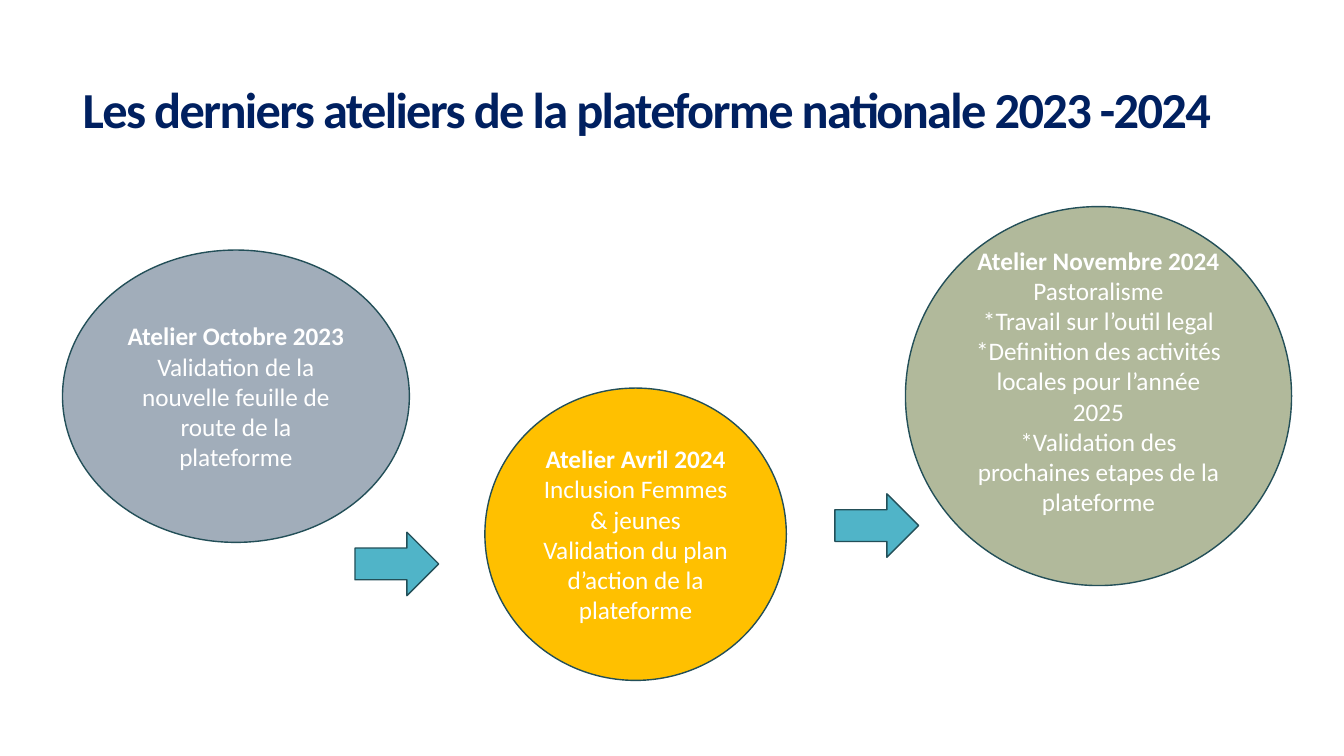
from dataclasses import dataclass

from pptx import Presentation
from pptx.dml.color import RGBColor as RGB
from pptx.enum.shapes import MSO_SHAPE as SHAPE
from pptx.enum.text import MSO_ANCHOR as ANCHOR, PP_ALIGN as ALIGN
from pptx.util import Inches, Pt

TITLE = "Les derniers ateliers de la plateforme nationale 2023 -2024"
TITLE_BOX = (5.4, 7.33, 88.37, 15.2)

WORKSHOPS = [
    {
        "name": "Atelier Octobre 2023",
        "topics": ["Validation de la nouvelle feuille de route de la plateforme"],
        "box": (4.65, 33.07, 25.81, 38.67),
        "fill": "A1ADBA",
        "bottom": 0.05,
    },
    {
        "name": "Atelier Avril 2024",
        "topics": [
            "Inclusion Femmes & jeunes",
            "Validation du plan d’action de la plateforme",
        ],
        "box": (36.08, 51.33, 22.43, 38.67),
        "fill": "FFC000",
        "bottom": 0.05,
    },
    {
        "name": "Atelier Novembre 2024",
        "topics": [
            "Pastoralisme",
            "*Travail sur l’outil legal",
            "*Definition des activités locales pour l’année 2025",
            "*Validation des prochaines etapes de la plateforme",
        ],
        "box": (67.37, 27.33, 28.73, 50.13),
        "fill": "B1B99B",
        "bottom": 0.35,
    },
]

ARROWS = [(26.41, 70.4), (62.12, 65.33)]
ARROW_SIZE = (6.23, 8.4)


@dataclass(frozen=True)
class Theme:
    font: str = "Calibri"
    title_size: int = 36
    body_size: int = 18
    title: str = "002060"
    text: str = "FFFFFF"
    arrow: str = "50B4C8"
    outline: str = "234F58"


THEME = Theme()

prs = Presentation()
prs.slide_width, prs.slide_height = Inches(13.33), Inches(7.5)
COLUMN, ROW = prs.slide_width / 100, prs.slide_height / 100


def place(box):
    x, y, w, h = box
    return [round(n) for n in (x * COLUMN, y * ROW, w * COLUMN, h * ROW)]


def style(font, size, color, bold):
    font.name, font.size, font.bold = THEME.font, Pt(size), bold
    font.color.rgb = RGB.from_string(color)


def add_shape(s, kind, box, fill):
    sp = s.shapes.add_shape(kind, *place(box))
    sp.shadow.inherit = False
    sp.fill.solid()
    sp.fill.fore_color.rgb = RGB.from_string(fill)
    sp.line.color.rgb = RGB.from_string(THEME.outline)
    sp.line.width = Pt(1)
    return sp


def add_title(s):
    sp = s.shapes.title
    sp.left, sp.top, sp.width, sp.height = place(TITLE_BOX)
    tf = sp.text_frame
    tf.text = TITLE
    tf.vertical_anchor = ANCHOR.MIDDLE
    p = tf.paragraphs[0]
    p.alignment, p.line_spacing = ALIGN.LEFT, 0.85
    style(p.font, THEME.title_size, THEME.title, True)
    r = p.runs[0]
    style(r.font, THEME.title_size, THEME.title, True)
    r.font._element.set("spc", "-120")


def add_workshop(s, workshop):
    sp = add_shape(s, SHAPE.OVAL, workshop["box"], workshop["fill"])
    tf = sp.text_frame
    tf.word_wrap, tf.vertical_anchor = True, ANCHOR.MIDDLE
    tf.margin_bottom = Inches(workshop["bottom"])
    tf.text = "\n".join([workshop["name"], *workshop["topics"]])
    for i, p in enumerate(tf.paragraphs):
        p.alignment = ALIGN.CENTER
        style(p.font, THEME.body_size, THEME.text, i == 0)


def main():
    s = prs.slides.add_slide(prs.slide_layouts.get_by_name("Title Only"))
    add_title(s)
    for workshop in WORKSHOPS:
        add_workshop(s, workshop)
    for corner in ARROWS:
        add_shape(s, SHAPE.RIGHT_ARROW, corner + ARROW_SIZE, THEME.arrow)
    prs.save("out.pptx")


if __name__ == "__main__":
    main()
